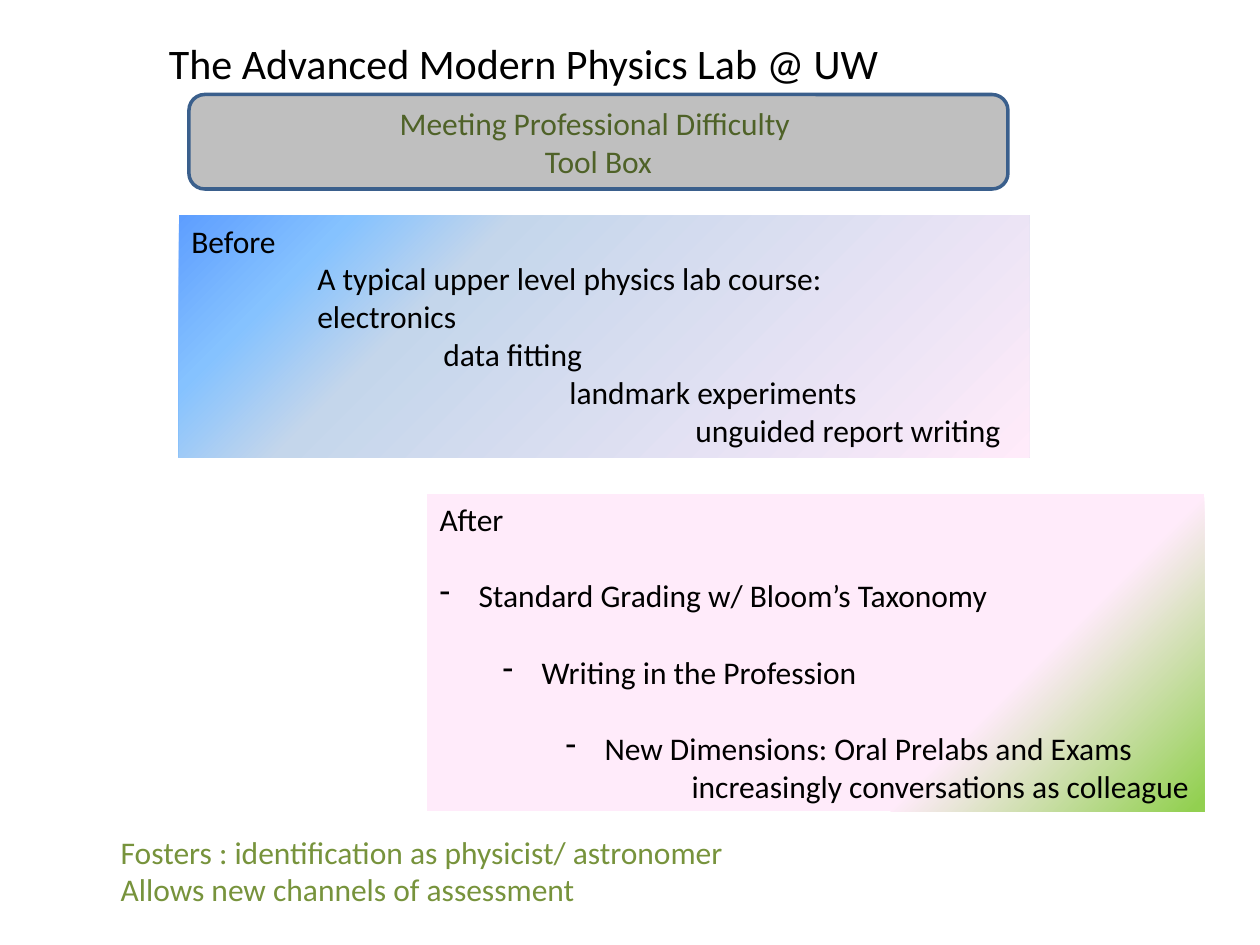
from dataclasses import dataclass

from pptx import Presentation, util as u
from pptx.dml.color import RGBColor
from pptx.enum import shapes, text
from pptx.oxml import parse_xml
from pptx.oxml.ns import nsdecls, qn


@dataclass(frozen=True)
class Theme:
    font: str = "Calibri"
    title: int = 24
    body: int = 18
    gap: int = 22  # one body line, in points
    ink: str = "000000"
    leaf: str = "77933C"
    moss: str = "4F6228"
    grey: str = "BFBFBF"
    outline: str = "3A5F8C"
    dawn: tuple = ((0, "5E9EFF"), (16, "85C2FF"), (31, "C4D6EB"), (100, "FFEBFA"))
    meadow: tuple = ((1, "92D050"), (29, "FFEBFA"))


@dataclass
class Line:
    words: str
    indent: float = 0  # inches
    bullet: bool = False
    gap: bool = False  # a free line above


LINEAR = '<a:lin ang="2700000" scaled="0"/>'
CORNER = '<a:path path="circle"><a:fillToRect l="100000" t="100000"/></a:path>'
HANG = 0.31


class Deck:
    CELL = 0.25  # grid of 40 columns by 30 rows

    def __init__(self, theme):
        self.theme = theme
        self.prs = Presentation()
        self.prs.slide_width, self.prs.slide_height = u.Inches(10), u.Inches(7.5)
        self.s = self.prs.slides.add_slide(self.prs.slide_layouts[5])

    def grid(self, *cells):
        return [u.Inches(c * self.CELL) for c in cells]

    def set_lines(self, sp, lines, color, size, align=text.PP_ALIGN.LEFT,
                  anchor=text.MSO_ANCHOR.TOP, wrap=True):
        tf = sp.text_frame
        tf.auto_size = text.MSO_AUTO_SIZE.NONE
        tf.word_wrap = wrap
        tf.vertical_anchor = anchor
        tf.text = "\n".join(line.words for line in lines)
        for p, line in zip(tf.paragraphs, lines):
            p.alignment = align
            if line.gap:
                p.space_before = u.Pt(self.theme.gap)
            pPr = p._p.get_or_add_pPr()
            if line.indent:
                pPr.set("marL", str(u.Inches(line.indent)))
                pPr.set("indent", "0")
            if line.bullet:
                pPr.set("indent", str(-u.Inches(HANG)))
                pPr.append(parse_xml(f'<a:buChar {nsdecls("a")} char="-"/>'))
            for r in p.runs:
                r.font.name = self.theme.font
                r.font.size = u.Pt(size)
                r.font.color.rgb = RGBColor.from_string(color)

    def title(self, at, words):
        sp = self.s.shapes.title
        sp.left, sp.top, sp.width, sp.height = self.grid(*at)
        self.set_lines(sp, [Line(words)], self.theme.ink, self.theme.title)

    def shape(self, kind, at):
        sp = self.s.shapes.add_shape(kind, *self.grid(*at))
        sp.shadow.inherit = False
        return sp

    def panel(self, at, stops, direction, lines):
        sp = self.shape(shapes.MSO_SHAPE.RECTANGLE, at)
        sp.line.fill.background()
        sp.fill.gradient()
        gs = "".join(f'<a:gs pos="{pos * 1000}"><a:srgbClr val="{c}"/></a:gs>'
                     for pos, c in stops)
        spPr = sp._element.spPr
        spPr.replace(spPr.find(qn("a:gradFill")), parse_xml(
            f'<a:gradFill {nsdecls("a")} rotWithShape="1">'
            f"<a:gsLst>{gs}</a:gsLst>{direction}</a:gradFill>"))
        self.set_lines(sp, lines, self.theme.ink, self.theme.body)

    def banner(self, at, lines):
        sp = self.shape(shapes.MSO_SHAPE.ROUNDED_RECTANGLE, at)
        sp.fill.solid()
        sp.fill.fore_color.rgb = RGBColor.from_string(self.theme.grey)
        sp.line.color.rgb = RGBColor.from_string(self.theme.outline)
        sp.line.width = u.Pt(2)
        self.set_lines(sp, lines, self.theme.moss, self.theme.body,
                       text.PP_ALIGN.CENTER, text.MSO_ANCHOR.MIDDLE)

    def note(self, at, lines):
        sp = self.s.shapes.add_textbox(*self.grid(*at))
        self.set_lines(sp, lines, self.theme.leaf, self.theme.body, wrap=False)


def main():
    theme = Theme()
    deck = Deck(theme)
    deck.title((4.96, 1, 24.32, 2), "The Advanced Modern Physics Lab @ UW")

    # Course before the change: topics step to the right
    deck.panel((5.68, 6.84, 27, 7.68), theme.dawn, LINEAR, [
        Line("Before"),
        Line("A typical upper level physics lab course:", 1),
        *(Line(topic, step) for step, topic in enumerate(
            ("electronics", "data fitting", "landmark experiments",
             "unguided report writing"), 1)),
    ])

    # Course after the change: bullets step by half an inch
    deck.panel((13.56, 15.68, 24.68, 10.08), theme.meadow, CORNER, [
        Line("After"),
        *(Line(point, HANG + step / 2, bullet=True, gap=True)
          for step, point in enumerate(
              ("Standard Grading w/ Bloom’s Taxonomy", "Writing in the Profession",
               "New Dimensions: Oral Prelabs and Exams"))),
        Line("increasingly conversations as colleague", 2),
    ])

    # Outcome
    deck.note((3.44, 26.24, 20.16, 3.76), [
        Line("Fosters : identification as physicist/ astronomer"),
        Line("Allows new channels of assessment"),
    ])

    # Heading banner
    deck.banner((6, 3, 26, 3),
                [Line("Meeting Professional Difficulty "), Line("Tool Box")])

    deck.prs.save("out.pptx")


if __name__ == "__main__":
    main()
